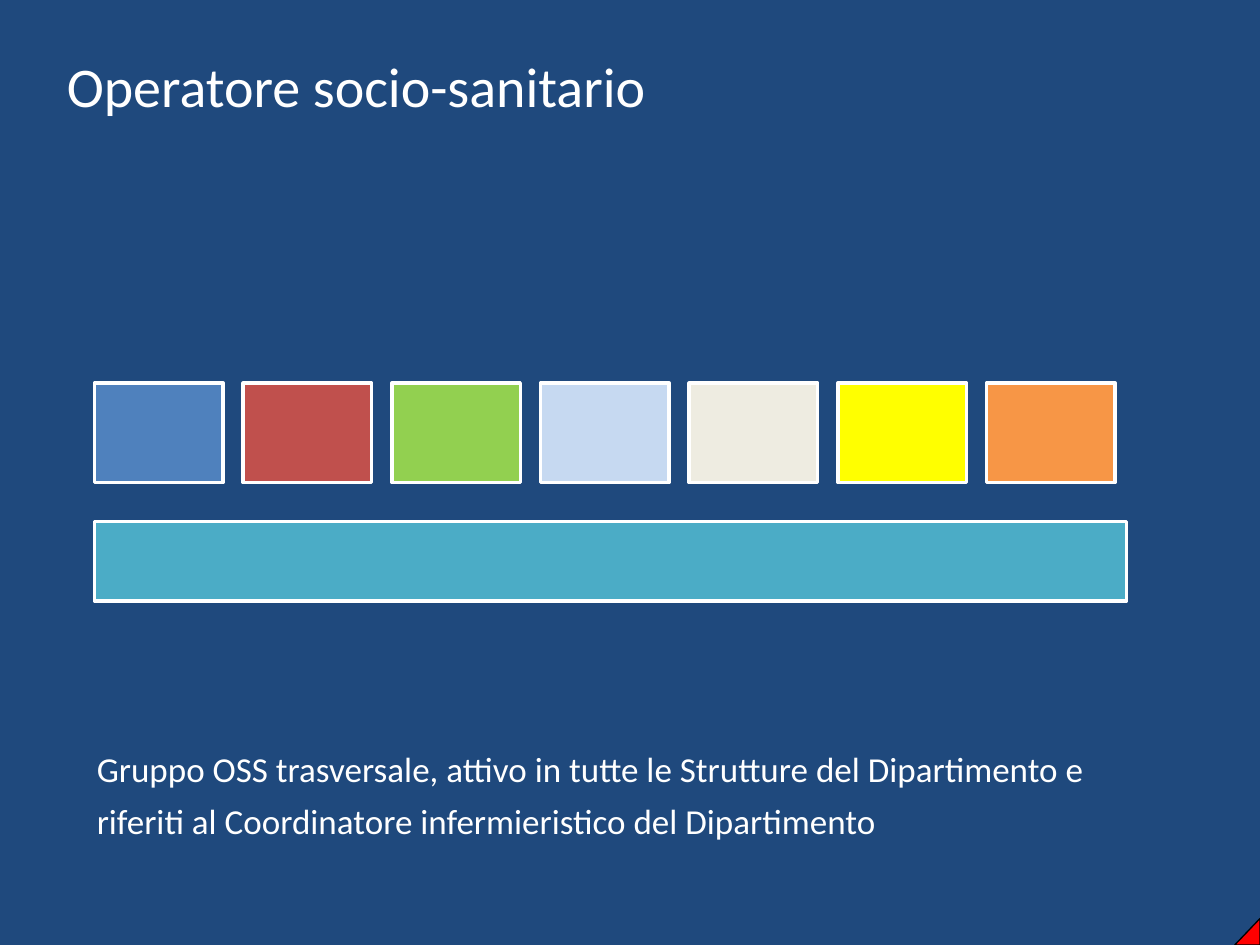
from pptx import Presentation
from pptx.dml.color import RGBColor
from pptx.enum.shapes import MSO_SHAPE as SHAPE
from pptx.enum.text import MSO_ANCHOR, MSO_AUTO_SIZE, PP_ALIGN
from pptx.oxml.ns import qn
from pptx.util import Inches, Pt

GROUP_COLORS = ["4F81BD", "C0504D", "92D050", "C6D9F1", "EEECE1", "FFFF00", "F79646"]
GROUP_LEFT, GROUP_STEP = 0.75, 1.18


def rgb(value):
    return RGBColor.from_string(value)


class SlideBuilder:
    font = "Calibri"
    text_color = "FFFFFF"
    background = "1F497D"

    def __init__(self, prs):
        self.slide = prs.slides.add_slide(prs.slide_layouts[5])
        fill = self.slide.background.fill
        fill.solid()
        fill.fore_color.rgb = rgb(self.background)

    def set_text(self, tf, text, size, wrap):
        """Fill a text frame with one left-aligned paragraph and return it."""
        tf.word_wrap = wrap
        tf.auto_size = MSO_AUTO_SIZE.SHAPE_TO_FIT_TEXT
        tf.vertical_anchor = MSO_ANCHOR.TOP
        p = tf.paragraphs[0]
        p.alignment = PP_ALIGN.LEFT
        r = p.add_run()
        r.text = text
        r.font.name = self.font
        r.font.size = Pt(size)
        r.font.color.rgb = rgb(self.text_color)
        return p

    def title(self, text, x, y, w, h):
        sp = self.slide.shapes.title
        sp.left, sp.top, sp.width, sp.height = map(Inches, (x, y, w, h))
        self.set_text(sp.text_frame, text, 32, wrap=False)

    def text(self, text, x, y, w, h):
        sp = self.slide.shapes.add_textbox(*map(Inches, (x, y, w, h)))
        p = self.set_text(sp.text_frame, text, 20, wrap=True)
        p.line_spacing = Pt(30)

    def shape(self, x, y, w, h, fill, line="FFFFFF", weight=2, kind=SHAPE.RECTANGLE):
        sp = self.slide.shapes.add_shape(kind, *map(Inches, (x, y, w, h)))
        sp.shadow.inherit = False
        sp.fill.solid()
        sp.fill.fore_color.rgb = rgb(fill)
        sp.line.color.rgb = rgb(line)
        sp.line.width = Pt(weight)
        return sp

    def corner(self, x, y, w, h):
        """Right triangle mirrored into the bottom right corner."""
        sp = self.shape(x, y, w, h, "FF0000", "000000", 0.75, SHAPE.RIGHT_TRIANGLE)
        sp._element.spPr.find(qn("a:xfrm")).set("flipH", "1")


def main():
    prs = Presentation()
    prs.slide_width, prs.slide_height = Inches(10), Inches(7.5)
    s = SlideBuilder(prs)
    s.title("Operatore socio-sanitario", 0.43, 0.36, 4.95, 0.64)
    for i, color in enumerate(GROUP_COLORS):
        s.shape(GROUP_LEFT + i * GROUP_STEP, 3.04, 1.02, 0.79, color)
    s.shape(GROUP_LEFT, 4.14, 8.19, 0.63, "4BACC6")
    s.text("Gruppo OSS trasversale, attivo in tutte le Strutture del Dipartimento e "
           "riferiti al Coordinatore infermieristico del Dipartimento",
           0.67, 5.8, 8.27, 0.91)
    s.corner(9.8, 7.29, 0.2, 0.21)
    prs.save("out.pptx")


if __name__ == "__main__":
    main()
